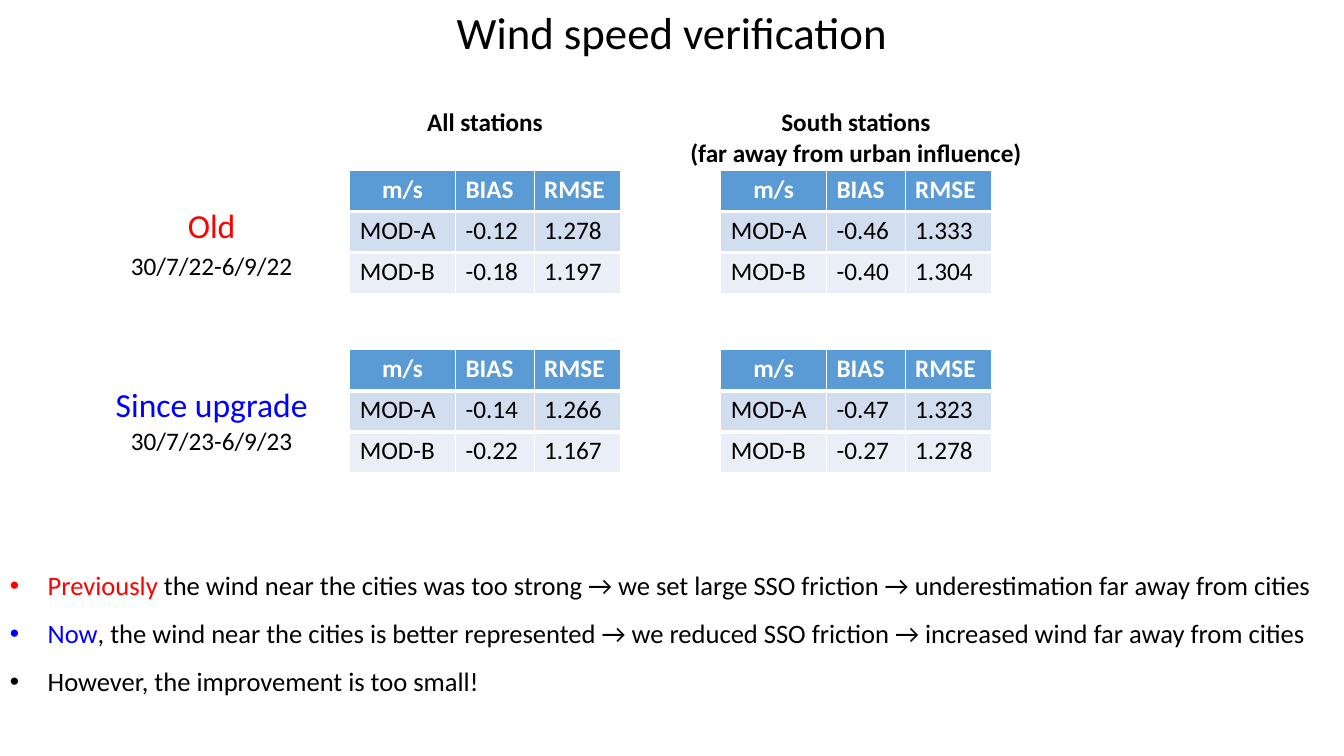
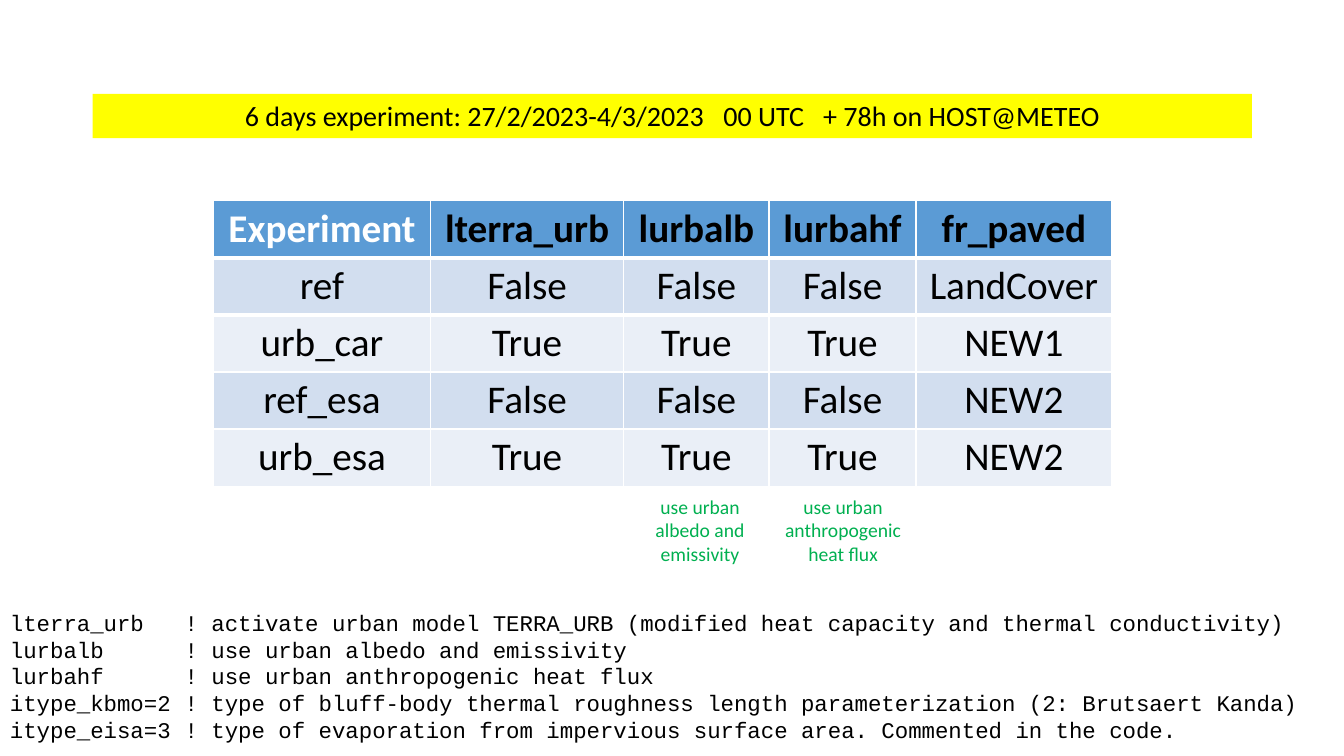
from lxml.etree import SubElement
from pptx import Presentation
from pptx.dml.color import RGBColor
from pptx.enum.text import MSO_ANCHOR, MSO_AUTO_SIZE, PP_ALIGN
from pptx.oxml.ns import qn
from pptx.util import Pt

COLORS = {
    "ink": "000000",
    "white": "FFFFFF",
    "old": "FF0000",
    "new": "0000FF",
    "note": "00B050",
    "banner": "FFFF00",
    "header": "5B9BD5",
    "odd": "D2DEEF",
    "even": "EAEFF7",
}
LEFT, CENTER = PP_ALIGN.LEFT, PP_ALIGN.CENTER


def write(frame, paragraphs, size=18, color="ink", bold=False, align=CENTER,
          font="Calibri", spacing=1.0):
    frame.word_wrap = True
    frame.auto_size = MSO_AUTO_SIZE.NONE
    frame.vertical_anchor = MSO_ANCHOR.TOP
    for index, pieces in enumerate(paragraphs):
        paragraph = frame.paragraphs[0] if index == 0 else frame.add_paragraph()
        paragraph.alignment = align
        paragraph.line_spacing = spacing
        if isinstance(pieces, str):
            pieces = [(pieces, color)]
        for words, tint in pieces:
            run = paragraph.add_run()
            run.text = words
            run.font.name = font
            run.font.size = Pt(size)
            run.font.bold = bold
            run.font.color.rgb = RGBColor.from_string(COLORS[tint])


def draw_table(slide, rows, left, top, widths, row_height, size, align, header_tints):
    grid = slide.shapes.add_table(
        len(rows), len(widths), Pt(left), Pt(top),
        Pt(sum(widths)), Pt(row_height * len(rows))).table
    for column, width in zip(grid.columns, widths):
        column.width = Pt(width)
    for r, row in enumerate(rows):
        grid.rows[r].height = Pt(row_height)
        band = "header" if r == 0 else "odd" if r % 2 else "even"
        for c, value in enumerate(row):
            cell = grid.cell(r, c)
            cell.margin_top = cell.margin_bottom = Pt(3)
            if r < 2:
                edge = SubElement(cell._tc.get_or_add_tcPr(),
                                  qn("a:lnT" if r else "a:lnB"), w=str(Pt(3)))
                SubElement(SubElement(edge, qn("a:solidFill")),
                           qn("a:srgbClr"), val=COLORS["white"])
            cell.fill.solid()
            cell.fill.fore_color.rgb = RGBColor.from_string(COLORS[band])
            write(cell.text_frame, [value], size=size, bold=r == 0,
                  color="ink" if r else header_tints[c],
                  align=CENTER if r == 0 and c == 0 else align)


deck = Presentation()
deck.slide_width, deck.slide_height = Pt(960), Pt(540)
title_only = deck.slide_layouts[5]

verification = deck.slides.add_slide(title_only)
title = verification.shapes.title
title.left, title.top, title.width, title.height = Pt(0), Pt(0), Pt(960), Pt(46)
write(title.text_frame, ["Wind speed verification"], size=32)

score_widths = [75.6, 56.2, 61.5]
regions = [
    (249.8, ["All stations"]),
    (514.8, ["South stations", "(far away from urban influence)"]),
]
heading_width = 280
for left, heading in regions:
    center = left + sum(score_widths) / 2
    heading_box = verification.shapes.add_textbox(
        Pt(center - heading_width / 2), Pt(72.7), Pt(heading_width), Pt(51))
    write(heading_box.text_frame, heading, bold=True)

periods = [
    ("Old", "old", "30/7/22-6/9/22", 121.7, 175,
     [[("-0.12", "1.278"), ("-0.18", "1.197")],
      [("-0.46", "1.333"), ("-0.40", "1.304")]]),
    ("Since upgrade", "new", "30/7/23-6/9/23", 249.8, 300.2,
     [[("-0.14", "1.266"), ("-0.22", "1.167")],
      [("-0.47", "1.323"), ("-0.27", "1.278")]]),
]
for period, tint, dates, top, dates_top, scores in periods:
    for label, label_top, size, color in [
            (period, top + 20.9, 24, tint), (dates, dates_top, 18, "ink")]:
        label_box = verification.shapes.add_textbox(
            Pt(72), Pt(label_top), Pt(158.4), Pt(size * 1.5))
        write(label_box.text_frame, [label], size=size, color=color)
    for (left, _), (older_model, newer_model) in zip(regions, scores):
        rows = [("m/s", "BIAS", "RMSE"), ("MOD-A", *older_model), ("MOD-B", *newer_model)]
        draw_table(verification, rows, left, top, score_widths, 29.3, 18,
                   LEFT, ["white"] * 3)

findings = verification.shapes.add_textbox(Pt(0), Pt(391.7), Pt(960), Pt(107.3))
write(findings.text_frame, [
    [("Previously", "old"),
     (" the wind near the cities was too strong → we set large SSO friction"
      " → underestimation far away from cities", "ink")],
    [("Now", "new"),
     (", the wind near the cities is better represented → we reduced SSO friction"
      " → increased wind far away from cities", "ink")],
    "However, the improvement is too small!",
], size=19, align=LEFT, spacing=1.5)
for paragraph in findings.text_frame.paragraphs:
    properties = paragraph._p.get_or_add_pPr()
    properties.set("marL", str(Pt(27)))
    properties.set("indent", str(-Pt(27)))
    SubElement(properties, qn("a:buFont"), typeface="Arial")
    SubElement(properties, qn("a:buChar"), char="•")

experiment = deck.slides.add_slide(title_only)
banner = experiment.shapes.title
banner.left, banner.top, banner.width, banner.height = Pt(66.2), Pt(67), Pt(828), Pt(31.7)
banner.fill.solid()
banner.fill.fore_color.rgb = RGBColor.from_string(COLORS["banner"])
gap = " "
write(banner.text_frame, [[(words, "ink") for words in (
    "6 days experiment: 27/2/2023-4/3/2023", gap, "00 UTC", gap,
    "+ 78h on HOST@METEO")]], size=20)
for run in banner.text_frame.paragraphs[0].runs:
    if run.text == gap:
        run._r.get_or_add_rPr().set("spc", "900")

settings = [
    ("Experiment", "lterra_urb", "lurbalb", "lurbahf", "fr_paved"),
    ("ref", "False", "False", "False", "LandCover"),
    ("urb_car", "True", "True", "True", "NEW1"),
    ("ref_esa", "False", "False", "False", "NEW2"),
    ("urb_esa", "True", "True", "True", "NEW2"),
]
draw_table(experiment, settings, 152.6, 143.3, [154.8, 138.2, 103.7, 105.1, 139.7],
           40.8, 28, CENTER, ["white"] + ["ink"] * 4)

for note, left, width in [
        ("use urban albedo and emissivity", 452.9, 94.3),
        ("use urban anthropogenic heat flux", 541.4, 121.7)]:
    note_box = experiment.shapes.add_textbox(Pt(left), Pt(349.9), Pt(width), Pt(58.3))
    write(note_box.text_frame, [note], size=14, color="note")

switches = [
    ("lterra_urb", "activate urban model TERRA_URB (modified heat capacity and thermal conductivity)"),
    ("lurbalb", "use urban albedo and emissivity"),
    ("lurbahf", "use urban anthropogenic heat flux"),
    ("itype_kbmo=2", "type of bluff-body thermal roughness length parameterization (2: Brutsaert Kanda)"),
    ("itype_eisa=3", "type of evaporation from impervious surface area. Commented in the code."),
]
listing = experiment.shapes.add_textbox(Pt(0), Pt(431.3), Pt(960), Pt(106.6))
write(listing.text_frame, [f"{switch}\t! {meaning}" for switch, meaning in switches],
      size=16, align=LEFT, font="Courier New")
for paragraph in listing.text_frame.paragraphs:
    tabs = SubElement(paragraph._p.get_or_add_pPr(), qn("a:tabLst"))
    SubElement(tabs, qn("a:tab"), pos=str(Pt(124.8)), algn="l")

deck.save("out.pptx")
